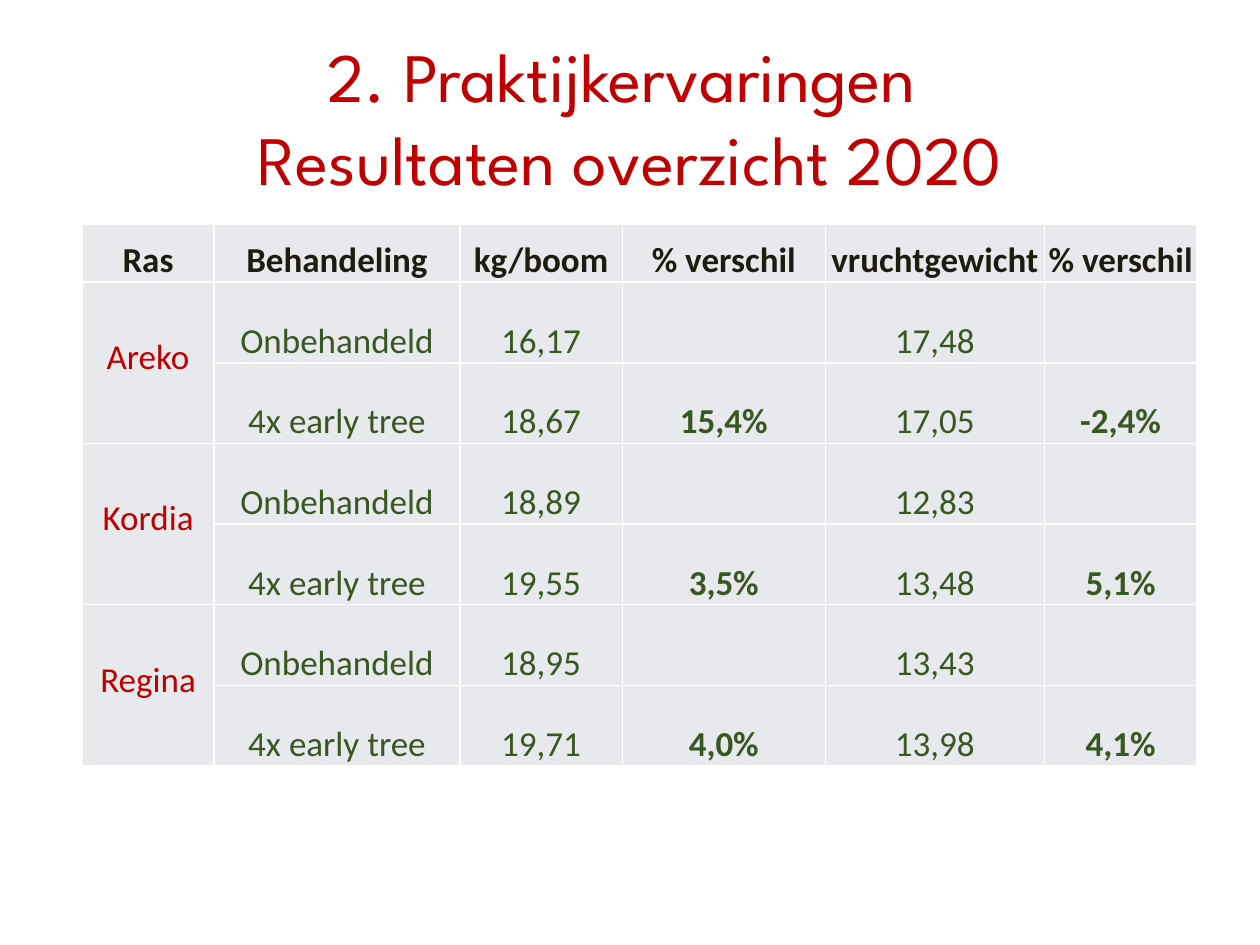
from lxml.etree import SubElement
from pptx import Presentation
from pptx.dml.color import RGBColor
from pptx.enum.text import MSO_ANCHOR, MSO_AUTO_SIZE, PP_ALIGN
from pptx.oxml.ns import qn
from pptx.util import Inches, Pt

COLORS = {"red": "C00000", "green": "385723", "dark": "1E1C11", "cell": "E8E9EC", "border": "FFFFFF"}
TITLE_LINES = ["2. Praktijkervaringen ", "Resultaten overzicht 2020"]
HEADERS = ["Ras", "Behandeling", "kg/boom", "% verschil", "vruchtgewicht", "% verschil"]
UNTREATED, TREATED = "Onbehandeld", "4x early tree"
RESULTS = [
    ("Areko", ("16,17", "", "17,48", ""), ("18,67", "15,4%", "17,05", "-2,4%")),
    ("Kordia", ("18,89", "", "12,83", ""), ("19,55", "3,5%", "13,48", "5,1%")),
    ("Regina", ("18,95", "", "13,43", ""), ("19,71", "4,0%", "13,98", "4,1%")),
]
COLUMN_WIDTHS = [1.05, 1.95, 1.29, 1.61, 1.74, 1.21]
HEADER_HEIGHT, ROW_HEIGHT = 0.46, 0.64


def add_span(para, text, font_name, size, color, bold=False):
    span = para.add_run()
    span.text = text
    span.font.name = font_name
    span.font.size = Pt(size)
    span.font.bold = bold
    span.font.color.rgb = RGBColor.from_string(COLORS[color])


def style_cell(cell):
    cell.fill.solid()
    cell.fill.fore_color.rgb = RGBColor.from_string(COLORS["cell"])
    properties = cell._tc.get_or_add_tcPr()
    for position, side in enumerate(("lnL", "lnR", "lnT", "lnB")):
        line = SubElement(properties, qn(f"a:{side}"), w=str(Pt(1)))
        fill = SubElement(line, qn("a:solidFill"))
        SubElement(fill, qn("a:srgbClr"), val=COLORS["border"])
        properties.insert(position, line)


def write_cell(cell, text, color, bold=False, bottom=0):
    cell.vertical_anchor = MSO_ANCHOR.BOTTOM
    cell.margin_left = cell.margin_right = cell.margin_top = Inches(0.01)
    cell.margin_bottom = Inches(bottom)
    para = cell.text_frame.paragraphs[0]
    para.alignment = PP_ALIGN.CENTER
    if text:
        add_span(para, text, "Calibri", 20, color, bold)


def add_title(page):
    title = page.shapes.title
    title.left, title.top, title.width, title.height = map(Inches, (0.5, 0.3, 9, 1.25))
    frame = title.text_frame
    frame.auto_size = MSO_AUTO_SIZE.NONE
    frame.vertical_anchor = MSO_ANCHOR.MIDDLE
    para = frame.paragraphs[0]
    para.alignment = PP_ALIGN.CENTER
    for index, text in enumerate(TITLE_LINES):
        if index:
            para.add_line_break()
        add_span(para, text, "League Spartan", 39.6, "red")


def add_results(page):
    heights = [HEADER_HEIGHT] + [ROW_HEIGHT] * (2 * len(RESULTS))
    frame = page.shapes.add_table(
        len(heights), len(HEADERS), Inches(0.65), Inches(1.78),
        Inches(sum(COLUMN_WIDTHS)), Inches(sum(heights)))
    table = frame.table
    for column, width in zip(table.columns, COLUMN_WIDTHS):
        column.width = Inches(width)
    for row, height in zip(table.rows, heights):
        row.height = Inches(height)
    for cell in table.iter_cells():
        style_cell(cell)
    for column, header in enumerate(HEADERS):
        write_cell(table.cell(0, column), header, "dark", bold=True)
    for group, (variety, untreated, treated) in enumerate(RESULTS):
        first = 1 + 2 * group
        variety_cell = table.cell(first, 0)
        variety_cell.merge(table.cell(first + 1, 0))
        write_cell(variety_cell, variety, "red", bottom=0.51)
        rows = [(UNTREATED, *untreated), (TREATED, *treated)]
        for row, values in enumerate(rows, first):
            for column, value in enumerate(values, 1):
                write_cell(table.cell(row, column), value, "green", bold=value.endswith("%"))


def main():
    """Build the slide with the 2020 results overview table."""
    deck = Presentation()
    deck.slide_width, deck.slide_height = Inches(10), Inches(7.5)
    page = deck.slides.add_slide(deck.slide_layouts[5])
    add_title(page)
    add_results(page)
    deck.save("out.pptx")


if __name__ == "__main__":
    main()
